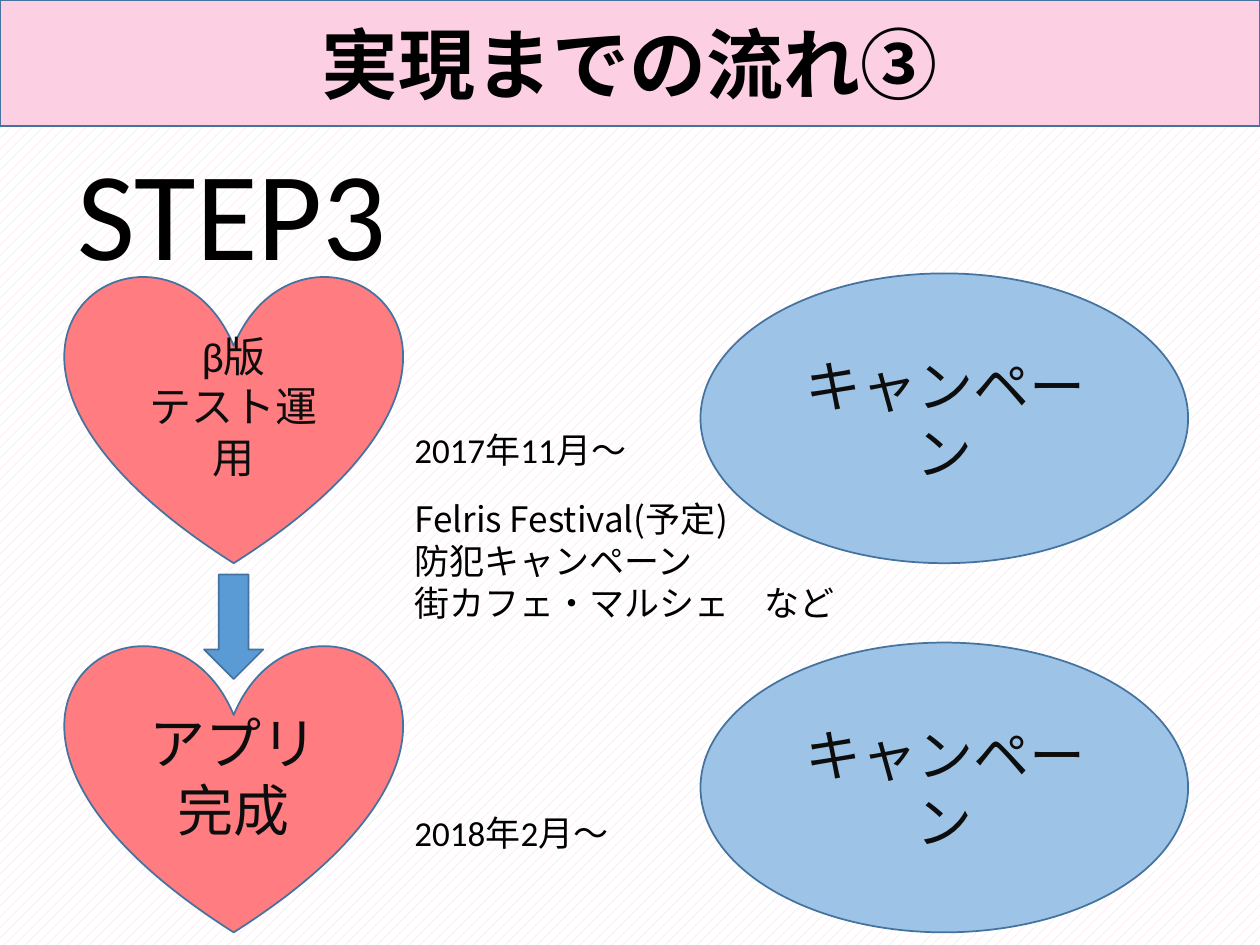
"""Build the third slide of a roadmap, with two steps and their campaigns."""
from dataclasses import dataclass

import lxml.etree
import pptx
import pptx.dml.color
import pptx.enum.dml
import pptx.enum.shapes
import pptx.enum.text
import pptx.oxml.ns
import pptx.util

Inches = pptx.util.Inches
Pt = pptx.util.Pt
Kind = pptx.enum.shapes.MSO_SHAPE
Align = pptx.enum.text.PP_ALIGN
Anchor = pptx.enum.text.MSO_ANCHOR
Fit = pptx.enum.text.MSO_AUTO_SIZE


@dataclass(frozen=True)
class Theme:
    pink: str = "FDCFE3"
    red: str = "FF7C80"
    sky: str = "9DC3E6"
    blue: str = "5B9BD5"
    edge: str = "43739E"
    ink: str = "0D0D0D"
    black: str = "000000"
    white: str = "FFFFFF"
    body: str = "Calibri"
    head: str = "Cambria"
    asian: str = "Noto Sans CJK JP"
    huge: int = 72
    title: int = 44
    large: int = 32
    mid: int = 24
    small: int = 20


THEME = Theme()


@dataclass(frozen=True)
class Box:
    x: float
    y: float
    w: float
    h: float

    def place(self) -> tuple:
        """Return the box as lengths."""
        return tuple(Inches(v) for v in (self.x, self.y, self.w, self.h))


@dataclass(frozen=True)
class Step:
    top: float
    lines: str
    size: int


@dataclass(frozen=True)
class Note:
    box: Box
    lines: str
    size: int = THEME.small
    font: str = THEME.body
    wrap: bool = True


STEPS = (
    Step(2.17, "β版\nテスト運用", THEME.mid),
    Step(5.1, "アプリ\n完成", THEME.large),
)
NOTES = (
    Note(Box(0.52, 1.02, 2.68, 1.31), "STEP3", THEME.huge, wrap=False),
    Note(Box(3.19, 3.35, 2.04, 0.44), "2017年11月～"),
    Note(Box(3.19, 6.39, 1.75, 0.44), "2018年2月～"),
    Note(Box(3.19, 3.9, 3.74, 1.11),
         "Felris Festival(予定)\n防犯キャンペーン\n街カフェ・マルシェ\u3000など".replace("\u3000", "　"),
         font=THEME.asian),
)


def tint(code: str) -> pptx.dml.color.RGBColor:
    """Turn a hex code into a colour."""
    return pptx.dml.color.RGBColor.from_string(code)


def write(shape, text: str, *, size: int, font: str = THEME.body,
          color: str = THEME.black, bold: bool = False, align=Align.LEFT,
          anchor=Anchor.TOP, wrap: bool = True, fit=Fit.NONE) -> None:
    """Fill a shape with text, one paragraph a line."""
    frame = shape.text_frame
    frame.text = text
    frame.word_wrap = wrap
    frame.auto_size = fit
    frame.vertical_anchor = anchor
    for para in frame.paragraphs:
        para.alignment = align
        for run in para.runs:
            run.font.size = Pt(size)
            run.font.name = font
            run.font.bold = bold
            run.font.color.rgb = tint(color)


def paint(shape, fill: str) -> None:
    """Give a shape its fill and the shared edge."""
    shape.fill.solid()
    shape.fill.fore_color.rgb = tint(fill)
    shape.line.color.rgb = tint(THEME.edge)
    shape.line.width = Pt(1)


def draw(slide, kind, box: Box, fill: str):
    """Add a flat preset shape."""
    shape = slide.shapes.add_shape(kind, *box.place())
    shape.shadow.inherit = False
    paint(shape, fill)
    return shape


def rim(run, color: str, width: float) -> None:
    """Outline the letters of a run."""
    name = pptx.oxml.ns.qn
    line = lxml.etree.Element(name("a:ln"), w=str(Pt(width)))
    fill = lxml.etree.SubElement(line, name("a:solidFill"))
    lxml.etree.SubElement(fill, name("a:srgbClr"), val=color)
    run.font._element.insert(0, line)


def head(slide, text: str) -> None:
    """Set the title as a full-width band."""
    title = slide.shapes.title
    title.left, title.top, title.width, title.height = Box(0, 0, 10, 1).place()
    paint(title, THEME.pink)
    write(title, text, size=THEME.title, font=THEME.head, bold=True,
          align=Align.CENTER, anchor=Anchor.MIDDLE)
    rim(title.text_frame.paragraphs[0].runs[0], THEME.white, 0.75)


def stage(slide, step: Step) -> None:
    """Draw a heart and the campaign beside it."""
    heart = draw(slide, Kind.HEART, Box(0.52, step.top, 2.67, 2.3), THEME.red)
    oval = draw(slide, Kind.OVAL, Box(5.56, step.top, 3.87, 2.3), THEME.sky)
    for shape, text, size in ((heart, step.lines, step.size),
                              (oval, "キャンペーン", THEME.large)):
        write(shape, text, size=size, color=THEME.ink,
              align=Align.CENTER, anchor=Anchor.MIDDLE)


def label(slide, note: Note) -> None:
    """Add a free line of text."""
    box = slide.shapes.add_textbox(*note.box.place())
    write(box, note.lines, size=note.size, font=note.font,
          wrap=note.wrap, fit=Fit.SHAPE_TO_FIT_TEXT)


def main() -> None:
    """Build and save the slide."""
    deck = pptx.Presentation()
    deck.slide_width, deck.slide_height = Inches(10), Inches(7.5)
    slide = deck.slides.add_slide(deck.slide_layouts[5])
    back = slide.background.fill
    back.patterned()
    back.pattern = pptx.enum.dml.MSO_PATTERN.PERCENT_20
    back.fore_color.rgb = tint(THEME.pink)
    back.back_color.rgb = tint(THEME.white)
    head(slide, "実現までの流れ③")
    for step in STEPS:
        stage(slide, step)
    draw(slide, Kind.DOWN_ARROW, Box(1.62, 4.56, 0.47, 0.83), THEME.blue)
    for note in NOTES:
        label(slide, note)
    deck.save("out.pptx")


if __name__ == "__main__":
    main()
